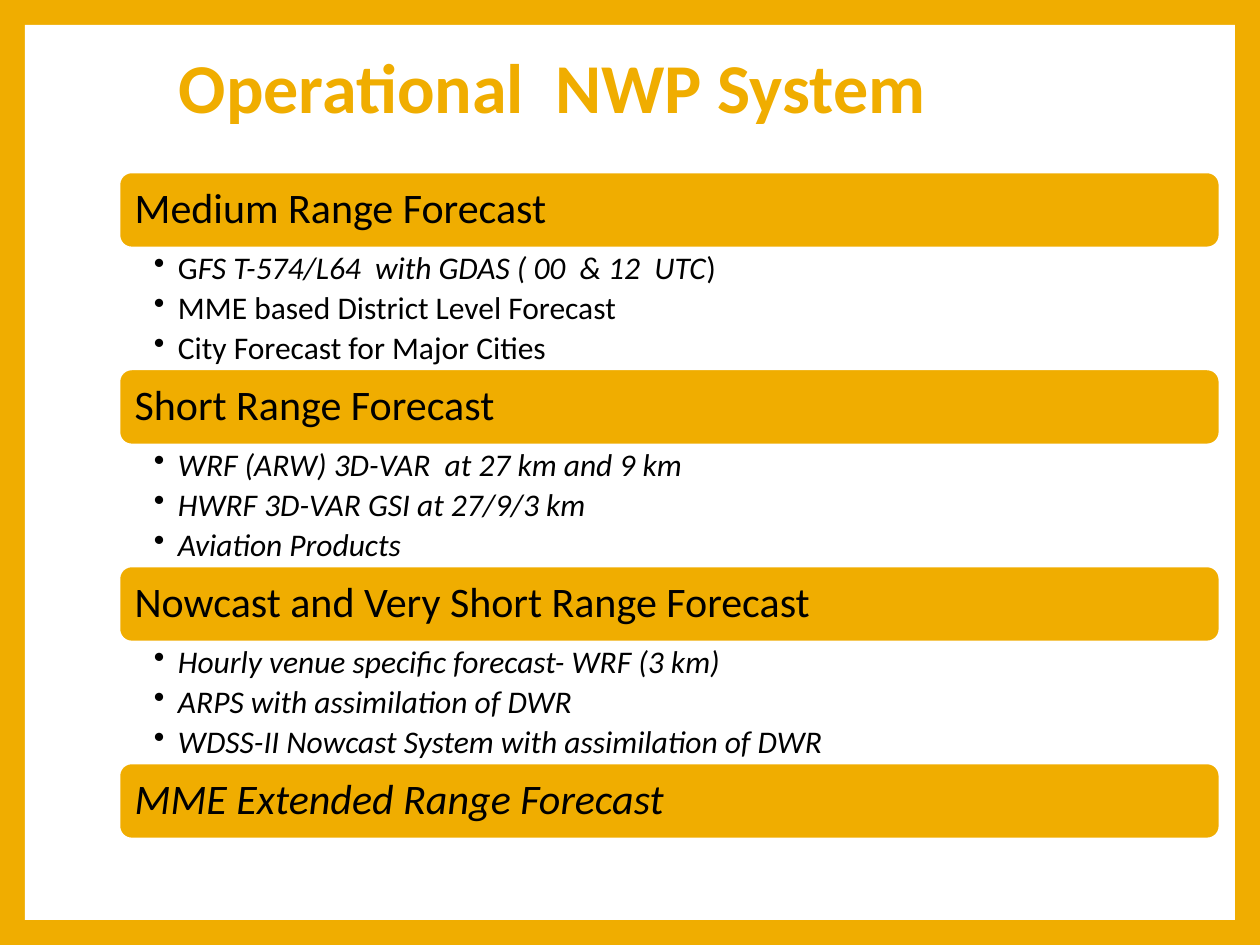
from dataclasses import dataclass

from lxml import etree
from pptx import Presentation
from pptx import util as u
from pptx.dml.color import RGBColor
from pptx.enum import shapes, text
from pptx.oxml import ns

PX = u.Inches(1) // 126


@dataclass(frozen=True)
class Theme:
    amber: RGBColor = RGBColor(0xF0, 0xAD, 0x00)
    white: RGBColor = RGBColor(0xFF, 0xFF, 0xFF)
    black: RGBColor = RGBColor(0, 0, 0)
    face: str = "Calibri"
    title_size: int = 40
    heading_size: int = 24
    item_size: int = 18


THEME = Theme()

FORECASTS = [
    ([("Medium Range Forecast", False)], [
        [("G", False), ("FS T-574/L64  with GDAS ( 00  & 12  UTC", True), (")", False)],
        [("MME based District Level Forecast", False)],
        [("City Forecast for Major Cities", False)],
    ]),
    ([("Short Range Forecast", False)], [
        [("WRF (ARW) 3D-VAR  at 27 km and 9 km", True)],
        [("HWRF 3D-VAR GSI at 27/9/3 km", True)],
        [("Aviation Products", True)],
    ]),
    ([("Nowcast and Very Short Range Forecast", False)], [
        [("Hourly venue specific forecast- WRF (3 km)", True)],
        [("ARPS with assimilation of DWR", True)],
        [("WDSS-II Nowcast System with assimilation of DWR", True)],
    ]),
    ([("MME Extended Range Forecast", True)], []),
]


def apply(target, **values):
    for name, value in values.items():
        setattr(target, name, value)


def px(*lengths):
    return [length * PX for length in lengths]


def set_frame(frame, anchor, left, top, right, bottom):
    apply(frame, word_wrap=True, auto_size=text.MSO_AUTO_SIZE.NONE,
          vertical_anchor=anchor, margin_left=left * PX, margin_top=top * PX,
          margin_right=right * PX, margin_bottom=bottom * PX)


def write(paragraph, runs, size, color, bold=False):
    apply(paragraph, alignment=text.PP_ALIGN.LEFT, line_spacing=0.9)
    for wording, italic in runs:
        run = paragraph.add_run()
        run.text = wording
        apply(run.font, name=THEME.face, size=u.Pt(size), bold=bold, italic=italic)
        run.font.color.rgb = color


def add_bullet(paragraph, indent):
    properties = paragraph._p.get_or_add_pPr()
    properties.set("marL", str(indent * PX))
    properties.set("indent", str(-indent * PX))
    etree.SubElement(properties, ns.qn("a:buChar")).set("char", "•")


def add_panel(slide, left, top, width, height):
    panel = slide.shapes.add_shape(shapes.MSO_SHAPE.RECTANGLE, *px(left, top, width, height))
    panel.shadow.inherit = False
    panel.fill.solid()
    panel.fill.fore_color.rgb = THEME.white
    panel.line.fill.background()
    slide.shapes.title.element.addprevious(panel.element)


def place_title(slide, left, top, width, height):
    title = slide.shapes.title
    apply(title, left=left * PX, top=top * PX, width=width * PX, height=height * PX)
    set_frame(title.text_frame, text.MSO_ANCHOR.MIDDLE, 13, 6, 13, 6)
    write(title.text_frame.paragraphs[0], [("Operational  NWP System", False)],
          THEME.title_size, THEME.amber, bold=True)


def add_heading(slide, runs, left, top, width, height):
    bar = slide.shapes.add_shape(shapes.MSO_SHAPE.ROUNDED_RECTANGLE, *px(left, top, width, height))
    bar.shadow.inherit = False
    bar.fill.solid()
    bar.fill.fore_color.rgb = THEME.amber
    bar.line.color.rgb = THEME.white
    bar.line.width = u.Pt(1.5)
    set_frame(bar.text_frame, text.MSO_ANCHOR.MIDDLE, 12, 12, 12, 12)
    write(bar.text_frame.paragraphs[0], runs, THEME.heading_size, THEME.black)


def add_items(slide, items, left, top, width, height):
    frame = slide.shapes.add_textbox(*px(left, top, width, height)).text_frame
    set_frame(frame, text.MSO_ANCHOR.TOP, 35, 4, 18, 4)
    for index, runs in enumerate(items):
        paragraph = frame.add_paragraph() if index else frame.paragraphs[0]
        add_bullet(paragraph, 24)
        paragraph.space_after = u.Pt(3.4)
        write(paragraph, runs, THEME.item_size, THEME.black)


def add_forecasts(slide, left, top, width, height):
    bar_height = 76
    pitch = (height - bar_height) // (len(FORECASTS) - 1)
    for index, (heading, items) in enumerate(FORECASTS):
        bar_top = top + index * pitch
        add_heading(slide, heading, left, bar_top, width, bar_height)
        if items:
            add_items(slide, items, left, bar_top + bar_height, width, pitch - bar_height)


def main():
    deck = Presentation()
    apply(deck, slide_width=1260 * PX, slide_height=945 * PX)
    slide = deck.slides.add_slide(deck.slide_layouts[5])
    slide.background.fill.solid()
    slide.background.fill.fore_color.rgb = THEME.amber
    add_panel(slide, 25, 25, 1210, 895)
    place_title(slide, 166, 37, 1021, 108)
    add_forecasts(slide, 119, 172, 1101, 667)
    deck.save("out.pptx")


if __name__ == "__main__":
    main()
